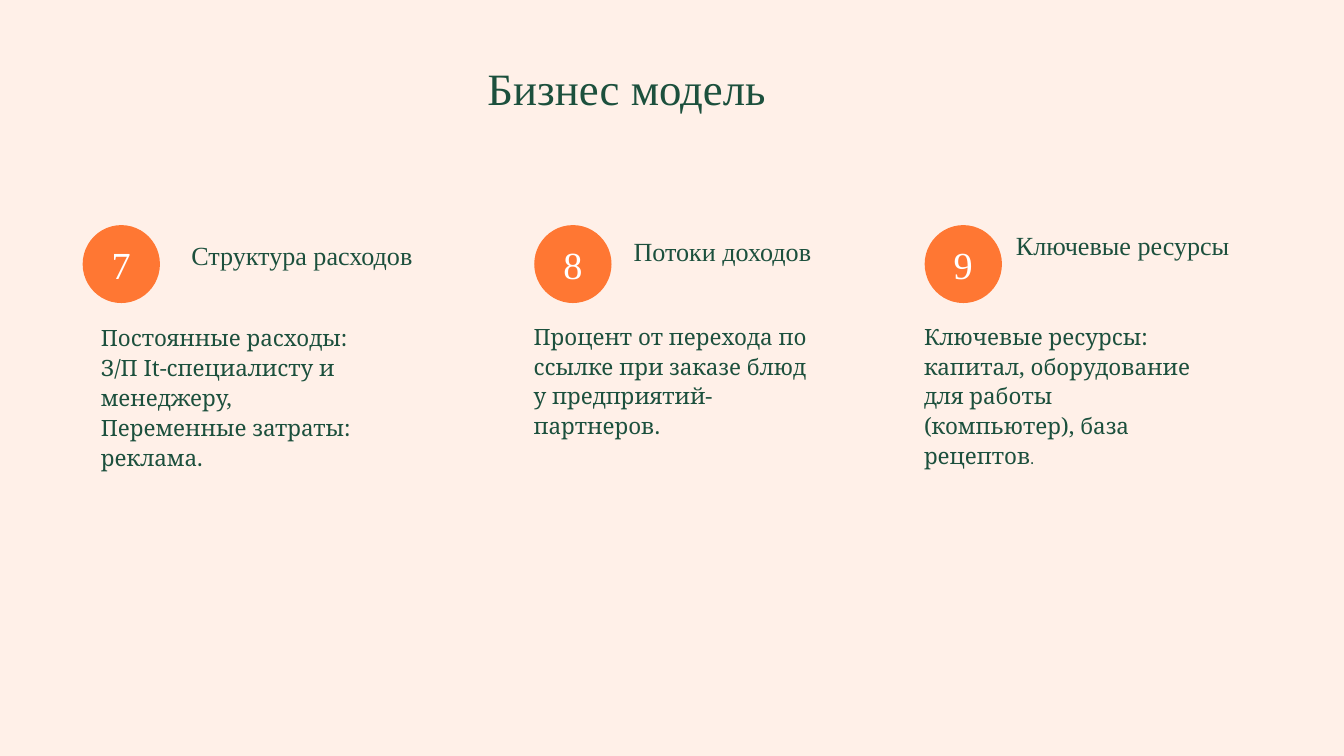
from pptx import Presentation
from pptx.dml.color import RGBColor
from pptx.enum.shapes import MSO_SHAPE
from pptx.enum.text import MSO_ANCHOR, MSO_AUTO_SIZE, PP_ALIGN
from pptx.util import Inches, Pt

CREAM = RGBColor(0xFF, 0xF0, 0xE8)
GREEN = RGBColor(0x1C, 0x50, 0x3D)
ORANGE = RGBColor(0xFF, 0x77, 0x33)
WHITE = RGBColor(0xFF, 0xFF, 0xFF)
HEADING_FONT = "Times New Roman"
BODY_FONT = "Noto Serif"


def write(frame, text, font, size, color, spacing=None, align=PP_ALIGN.LEFT):
    frame.word_wrap = True
    frame.text = text
    for paragraph in frame.paragraphs:
        paragraph.alignment = align
        if spacing:
            paragraph.line_spacing = Pt(spacing)
        for run in paragraph.runs:
            run.font.name = font
            run.font.size = Pt(size)
            run.font.color.rgb = color


def clear_margins(frame):
    frame.margin_left = frame.margin_right = 0
    frame.margin_top = frame.margin_bottom = 0


prs = Presentation()
prs.slide_width = Inches(20)
prs.slide_height = Inches(11.25)
slide = prs.slides.add_slide(prs.slide_layouts[5])
slide.background.fill.solid()
slide.background.fill.fore_color.rgb = CREAM

# Title
title = slide.shapes.title
title.left, title.top = Inches(3.32), Inches(0.9)
title.width, title.height = Inches(12.01), Inches(0.78)
clear_margins(title.text_frame)
title.text_frame.vertical_anchor = MSO_ANCHOR.TOP
title.text_frame.auto_size = MSO_AUTO_SIZE.NONE
write(title.text_frame, "Бизнес модель", HEADING_FONT, 48, GREEN, 57.6, PP_ALIGN.CENTER)

# Blocks: number, circle left, heading, heading position, body, body position
blocks = [
    ("7", 1.23, "Структура расходов", (2.75, 3.52),
     "Постоянные расходы: З/П It-специалисту и менеджеру,\n"
     "Переменные затраты: реклама.", (1.5, 4.78)),
    ("8", 7.95, "Потоки доходов", (9.33, 3.45),
     "Процент от перехода по ссылке при заказе блюд у предприятий-партнеров.",
     (7.94, 4.76)),
    ("9", 13.76, "Ключевые ресурсы", (15.02, 3.36),
     "Ключевые ресурсы: капитал, оборудование для работы (компьютер), база рецептов",
     (13.75, 4.76)),
]

for number, circle_left, heading, heading_at, body, body_at in blocks:
    # Numbered circle
    circle = slide.shapes.add_shape(
        MSO_SHAPE.OVAL, Inches(circle_left), Inches(3.35), Inches(1.15), Inches(1.16))
    circle.shadow.inherit = False
    circle.fill.solid()
    circle.fill.fore_color.rgb = ORANGE
    circle.line.fill.background()
    clear_margins(circle.text_frame)
    circle.text_frame.vertical_anchor = MSO_ANCHOR.MIDDLE
    write(circle.text_frame, number, HEADING_FONT, 41, WHITE, 49.5, PP_ALIGN.CENTER)

    # Heading
    heading_box = slide.shapes.add_textbox(
        *map(Inches, heading_at), Inches(3.5), Inches(0.57))
    write(heading_box.text_frame, heading, HEADING_FONT, 28, GREEN)

    # Description
    body_box = slide.shapes.add_textbox(
        *map(Inches, body_at), Inches(4.11), Inches(2.24))
    clear_margins(body_box.text_frame)
    write(body_box.text_frame, body, BODY_FONT, 24, GREEN, 32)

# Smaller full stop closing the last description
full_stop = body_box.text_frame.paragraphs[0].add_run()
full_stop.text = "."
full_stop.font.name = BODY_FONT
full_stop.font.size = Pt(16)
full_stop.font.color.rgb = GREEN

prs.save("out.pptx")
